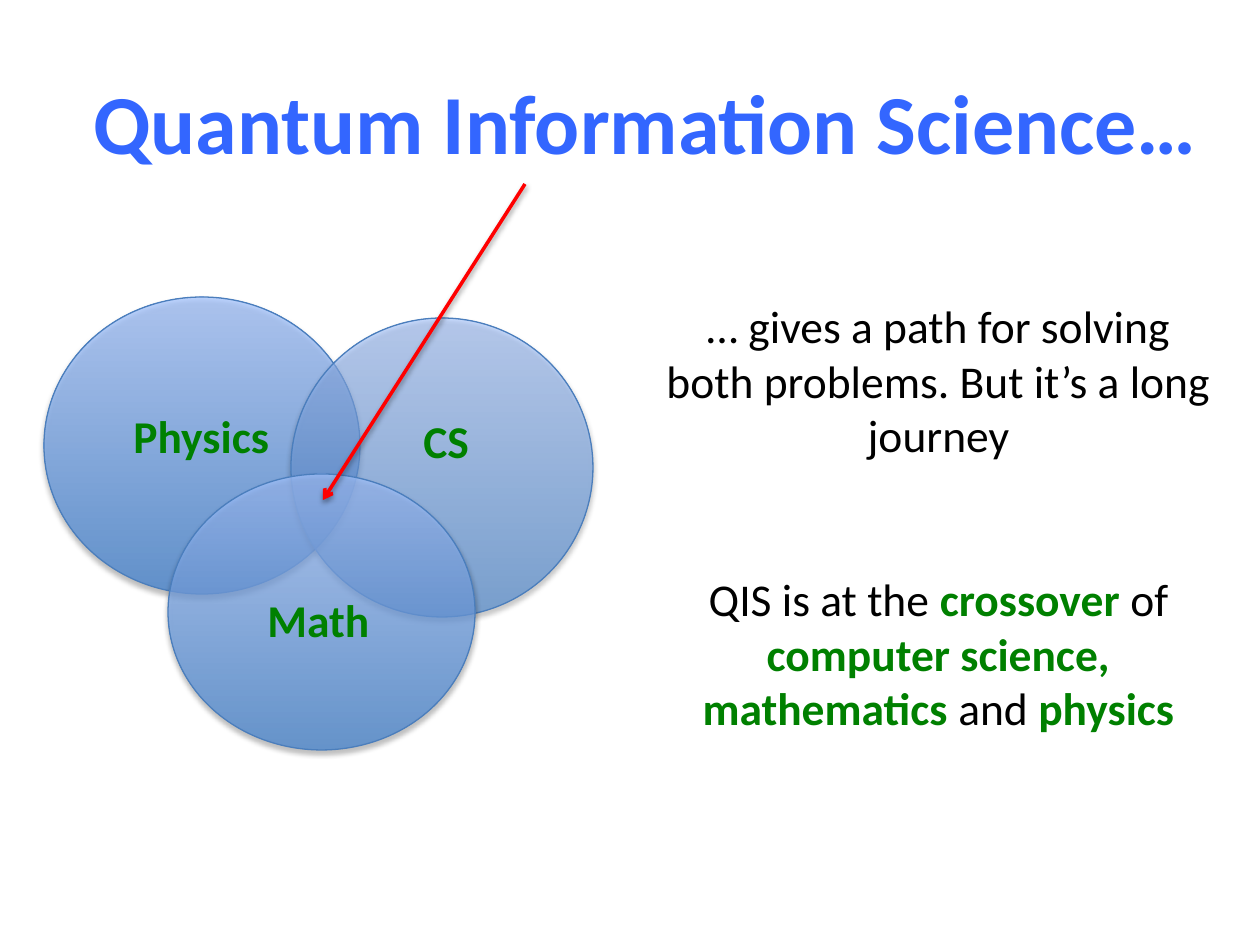
from lxml.etree import SubElement
from pptx import Presentation
from pptx.dml.color import RGBColor
from pptx.enum.shapes import MSO_CONNECTOR, MSO_SHAPE
from pptx.enum.text import MSO_ANCHOR, MSO_AUTO_SIZE, PP_ALIGN
from pptx.oxml.ns import qn
from pptx.util import Emu, Pt

BLUE, GREEN, BLACK, RED = "3366FF", "008000", "000000", "FF0000"
EDGE, DEEP, PALE = "4B7EBC", "3F80CE", "A4C4FF"
color = RGBColor.from_string


def px(*lengths):
    return [Emu(round(n * 914400 / 126)) for n in lengths]


def add_shadow(spPr, distance, opacity):
    effects = spPr.find(qn("a:effectLst"))
    if effects is None:
        effects = SubElement(spPr, qn("a:effectLst"))
    shadow = SubElement(effects, qn("a:outerShdw"), blurRad=str(Pt(3.1)),
                        dist=str(Pt(distance)), dir="5400000", rotWithShape="0")
    black = SubElement(shadow, qn("a:srgbClr"), val=BLACK)
    SubElement(black, qn("a:alpha"), val=str(opacity * 1000))


prs = Presentation()
prs.slide_width, prs.slide_height = px(1260, 945)
slide = prs.slides.add_slide(prs.slide_layouts[5])
shapes = slide.shapes

# Title
title = shapes.title
title.left, title.top, title.width, title.height = px(21, 0, 1249, 241)
title.text_frame.vertical_anchor = MSO_ANCHOR.MIDDLE
heading = title.text_frame.paragraphs[0]
heading.text = "Quantum Information Science…"
heading.alignment = PP_ALIGN.CENTER
heading.font.name, heading.font.size, heading.font.bold = "Calibri", Pt(48), True
heading.font.color.rgb = color(BLUE)

# Statements on the right; each run is (text, emphasised)
statements = [
    [("… gives a path for solving both problems. But it’s a long journey", False)],
    [("QIS is at the ", False), ("crossover", True), (" of ", False),
     ("computer science, mathematics", True), (" and ", False), ("physics", True)],
]
message = shapes.add_textbox(*px(650, 292, 577, 454)).text_frame
message.word_wrap = True
message.auto_size = MSO_AUTO_SIZE.SHAPE_TO_FIT_TEXT
for i, statement in enumerate(statements):
    paragraph = message.add_paragraph() if i else message.paragraphs[0]
    paragraph.alignment = PP_ALIGN.CENTER
    paragraph.space_before = Pt(62.5 * i)
    paragraph.font.name, paragraph.font.size = "Calibri", Pt(26)
    for text, emphasised in statement:
        run = paragraph.add_run()
        run.text = text
        run.font.bold = emphasised
        run.font.color.rgb = color(GREEN if emphasised else BLACK)

# Overlapping fields: left, top, width, height, opacity in percent
fields = [
    (44, 297, 316, 297, 73),
    (291, 318, 302, 299, 59),
    (168, 474, 307, 276, 70),
]
for *box, opacity in fields:
    field = shapes.add_shape(MSO_SHAPE.OVAL, *px(*box))
    field.fill.gradient()
    field.fill.gradient_angle = 90
    for stop, shade, position in zip(field.fill.gradient_stops, (DEEP, PALE), (0, 1)):
        stop.color.rgb = color(shade)
        stop.position = position
    for tint in field._element.spPr.iter(qn("a:srgbClr")):
        SubElement(tint, qn("a:alpha"), val=str(opacity * 1000))
    field.line.color.rgb = color(EDGE)
    field.line.width = Pt(0.75)
    field.shadow.inherit = False
    add_shadow(field._element.spPr, 1.8, 35)

# Field names
for name, left, top in [("Physics", 121, 402), ("CS", 411, 407), ("Math", 255, 586)]:
    label = shapes.add_textbox(*px(left, top, 239, 68)).text_frame
    label.word_wrap = True
    label.auto_size = MSO_AUTO_SIZE.SHAPE_TO_FIT_TEXT
    paragraph = label.paragraphs[0]
    paragraph.text = name
    paragraph.font.name, paragraph.font.size, paragraph.font.bold = "Calibri", Pt(26), True
    paragraph.font.color.rgb = color(GREEN)

# Arrow from the title to the common overlap
pointer = shapes.add_connector(MSO_CONNECTOR.STRAIGHT, *px(525, 184, 323, 500))
pointer.line.color.rgb = color(RED)
pointer.line.width = Pt(2)
SubElement(pointer.line._get_or_add_ln(), qn("a:tailEnd"), type="arrow")
add_shadow(pointer._element.spPr, 1.6, 38)

prs.save("out.pptx")
